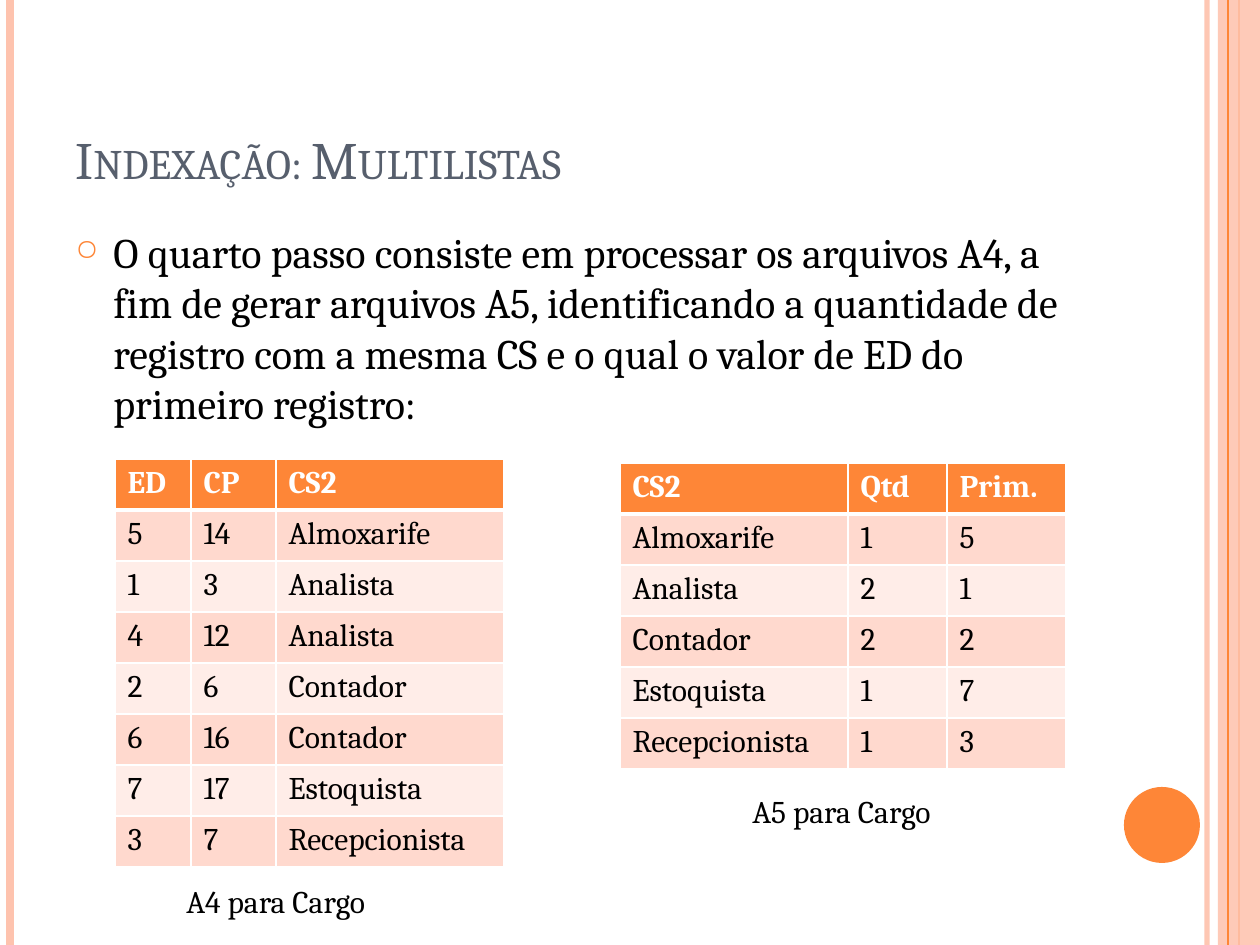
from lxml.etree import SubElement
from pptx import Presentation
from pptx.dml.color import RGBColor
from pptx.enum.shapes import MSO_CONNECTOR as Connector, MSO_SHAPE as Shape
from pptx.enum.text import MSO_ANCHOR as Anchor, PP_ALIGN as Align
from pptx.oxml.ns import qn
from pptx.util import Emu, Pt

FONT = "Cambria"
COLORS = {
    "orange": "FE8637", "peach": "FEC3AE", "slate": "575F6D", "black": "000000",
    "white": "FFFFFF", "odd_row": "FFD9CE", "even_row": "FFEDE8",
}
A4_ROWS = [
    ("ED", "CP", "CS2"),
    ("5", "14", "Almoxarife"),
    ("1", "3", "Analista"),
    ("4", "12", "Analista"),
    ("2", "6", "Contador"),
    ("6", "16", "Contador"),
    ("7", "17", "Estoquista"),
    ("3", "7", "Recepcionista"),
]
A5_ROWS = [
    ("CS2", "Qtd", "Prim."),
    ("Almoxarife", "1", "5"),
    ("Analista", "2", "1"),
    ("Contador", "2", "2"),
    ("Estoquista", "1", "7"),
    ("Recepcionista", "1", "3"),
]
ROW_HEIGHT = 51


def px(length):
    return Emu(round(length * 914400 / 126))


def rgb(color):
    return RGBColor.from_string(COLORS[color])


def set_alpha(fill_owner, percent):
    for color in fill_owner.iter(qn("a:srgbClr")):
        SubElement(color, qn("a:alpha"), val=str(percent * 1000))


def set_font(paragraph, size, color, bold=False):
    font = paragraph.font
    font.name, font.size, font.bold = FONT, Pt(size), bold
    font.color.rgb = rgb(color)


def add_text(slide, box, text, size, color, anchor=Anchor.TOP, wrap=True):
    frame = slide.shapes.add_textbox(*map(px, box)).text_frame
    frame.word_wrap = wrap
    frame.vertical_anchor = anchor
    paragraph = frame.paragraphs[0]
    paragraph.add_run().text = text
    return paragraph, size, color


def add_stripe(slide, x, height, width, color, alpha=100):
    stripe = slide.shapes.add_connector(Connector.STRAIGHT, px(x), 0, px(x), px(height))
    stripe.line.color.rgb = rgb(color)
    stripe.line.width = Pt(width)
    properties = stripe._element.spPr
    if alpha < 100:
        set_alpha(properties, alpha)
    SubElement(properties, qn("a:effectLst"))


def add_solid(slide, kind, box, color):
    solid = slide.shapes.add_shape(kind, *map(px, box))
    solid.shadow.inherit = False
    solid.fill.solid()
    solid.fill.fore_color.rgb = rgb(color)
    solid.line.fill.background()
    return solid


def add_frame(slide, box):
    left, top, width, height = box
    right = left + width
    add_stripe(slide, right - 53, height, 3, "peach", 93)
    add_stripe(slide, left + 10, height, 4.5, "peach")
    add_stripe(slide, right - 21, height, 1.5, "orange")
    band = add_solid(slide, Shape.RECTANGLE, (right - 42, top, 42, height), "peach")
    set_alpha(band._element.spPr, 87)
    add_stripe(slide, right - 32, height, 0.75, "orange")
    add_solid(slide, Shape.OVAL, (right - 136, top + 787, 76, 76), "orange")


def add_title(slide, box, text):
    paragraph, size, color = add_text(slide, box, text, 30, "slate", Anchor.BOTTOM)
    set_font(paragraph, size, color)
    paragraph.runs[0]._r.get_or_add_rPr().set("cap", "small")


def add_body(slide, box, text):
    paragraph, size, color = add_text(slide, box, text, 24, "black")
    paragraph.space_before = Pt(6)
    properties = paragraph._p.get_or_add_pPr()
    properties.set("marL", str(px(38)))
    properties.set("indent", str(-px(38)))
    bullet_color = SubElement(properties, qn("a:buClr"))
    SubElement(bullet_color, qn("a:srgbClr"), val=COLORS["orange"])
    SubElement(properties, qn("a:buSzPct"), val="70000")
    SubElement(properties, qn("a:buChar"), char="○")
    set_font(paragraph, size, color)


def set_borders(cell, top, bottom):
    properties = cell._tc.get_or_add_tcPr()
    for side, width in (("L", 1), ("R", 1), ("T", top), ("B", bottom)):
        line = SubElement(properties, qn(f"a:ln{side}"), w=str(Pt(width)))
        fill = SubElement(line, qn("a:solidFill"))
        SubElement(fill, qn("a:srgbClr"), val=COLORS["white"])


def add_grid(slide, left, top, widths, rows):
    box = (left, top, sum(widths), ROW_HEIGHT * len(rows))
    grid = slide.shapes.add_table(len(rows), len(widths), *map(px, box)).table
    for column, width in zip(grid.columns, widths):
        column.width = px(width)
    for r, values in enumerate(rows):
        grid.rows[r].height = px(ROW_HEIGHT)
        header = r == 0
        background = "orange" if header else "odd_row" if r % 2 else "even_row"
        for c, value in enumerate(values):
            cell = grid.cell(r, c)
            set_borders(cell, 3 if r == 1 else 1, 3 if header else 1)
            cell.fill.solid()
            cell.fill.fore_color.rgb = rgb(background)
            cell.text = value
            set_font(cell.text_frame.paragraphs[0], 18, "white" if header else "black", header)


def add_caption(slide, box, text):
    paragraph, size, color = add_text(slide, box, text, 18, "black", wrap=False)
    paragraph.alignment = Align.LEFT
    set_font(paragraph, size, color)


def main():
    deck = Presentation()
    deck.slide_width, deck.slide_height = px(1260), px(945)
    slide = deck.slides.add_slide(deck.slide_layouts[6])
    add_frame(slide, (0, 0, 1260, 945))
    add_title(slide, (63, 38, 1029, 158), "Indexação: Multilistas")
    add_body(
        slide, (63, 220, 1029, 672),
        "O quarto passo consiste em processar os arquivos A4, a fim de gerar arquivos A5, "
        "identificando a quantidade de registro com a mesma CS e o qual o valor de ED do "
        "primeiro registro:",
    )
    add_grid(slide, 115, 459, (76, 85, 228), A4_ROWS)
    add_caption(slide, (174, 876, 239, 50), "A4 para Cargo")
    add_grid(slide, 620, 463, (228, 99, 119), A5_ROWS)
    add_caption(slide, (740, 786, 239, 50), "A5 para Cargo")
    deck.save("out.pptx")


if __name__ == "__main__":
    main()
